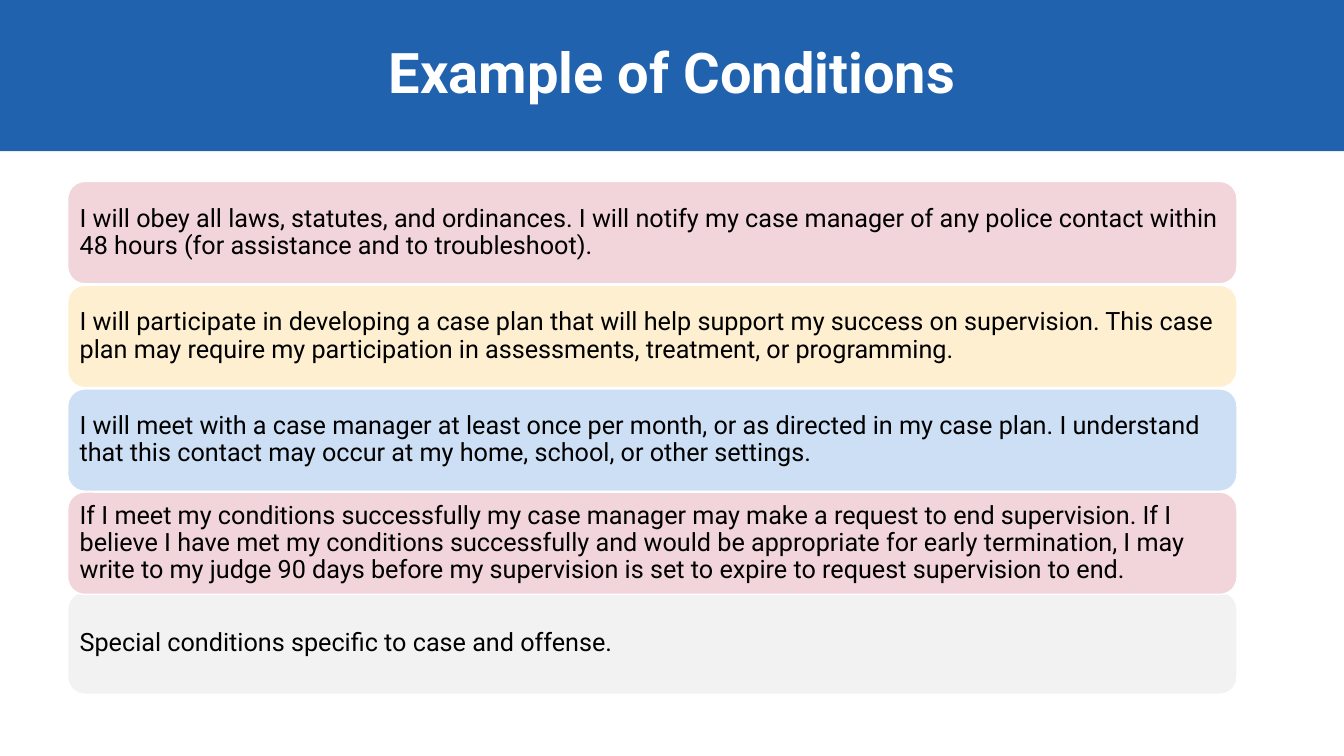
from pptx import Presentation
from pptx.dml.color import RGBColor
from pptx.enum import shapes, text
from pptx.util import Pt

BLUE = RGBColor(0x21, 0x62, 0xAE)
WHITE = RGBColor(0xFF, 0xFF, 0xFF)
BLACK = RGBColor(0, 0, 0)
ROSE = RGBColor(0xF1, 0xD5, 0xDA)
CREAM = RGBColor(0xFE, 0xEF, 0xD1)
SKY = RGBColor(0xCC, 0xDF, 0xF5)
GREY = RGBColor(0xF2, 0xF2, 0xF2)

WIDE, HIGH = Pt(960), Pt(540)
HEAD = {"name": "Roboto", "size": Pt(40), "bold": True}
BODY = {"name": "Roboto", "size": Pt(18), "bold": False}
INSET = {"margin_left": Pt(5), "margin_right": Pt(5),
         "margin_top": Pt(5), "margin_bottom": Pt(5)}
FRAME = {"word_wrap": True, "auto_size": text.MSO_AUTO_SIZE.NONE,
         "vertical_anchor": text.MSO_ANCHOR.MIDDLE}

CARDS = [
    (129.6, ROSE, "I will obey all laws, statutes, and ordinances. I will notify my case "
     "manager of any police contact within 48 hours (for assistance and to troubleshoot)."),
    (203.7, CREAM, "I will participate in developing a case plan that will help support my "
     "success on supervision. This case plan may require my participation in assessments, "
     "treatment, or programming."),
    (277.8, SKY, "I will meet with a case manager at least once per month, or as directed in "
     "my case plan. I understand that this contact may occur at my home, school, or other "
     "settings."),
    (422.8, GREY, "Special conditions specific to case and offense."),
    (351.5, ROSE, "If I meet my conditions successfully my case manager may make a request to "
     "end supervision. If I believe I have met my conditions successfully and would be "
     "appropriate for early termination, I may write to my judge 90 days before my "
     "supervision is set to expire to request supervision to end."),
]


def style(item, form):
    for key, value in form.items():
        setattr(item, key, value)


def paint(shape, color):
    shape.fill.solid()
    shape.fill.fore_color.rgb = color


def write(shape, words, font, color, align):
    frame = shape.text_frame
    frame.text = words
    style(frame, FRAME)
    para = frame.paragraphs[0]
    style(para, {"alignment": align, "line_spacing": 0.9})
    style(para.font, font)
    para.font.color.rgb = color


def banner(slide, words):
    title = slide.shapes.title
    style(title, {"left": 0, "top": 0, "width": WIDE, "height": Pt(108)})
    paint(title, BLUE)
    write(title, words, HEAD, WHITE, text.PP_ALIGN.CENTER)


def card(slide, top, color, words):
    box = slide.shapes.add_shape(shapes.MSO_SHAPE.ROUNDED_RECTANGLE,
                                 Pt(48.4), Pt(top), Pt(835.2), Pt(73.1))
    box.shadow.inherit = False
    paint(box, color)
    box.line.color.rgb = WHITE
    box.line.width = Pt(1)
    style(box.text_frame, INSET)
    write(box, words, BODY, BLACK, text.PP_ALIGN.LEFT)


def main():
    deck = Presentation()
    style(deck, {"slide_width": WIDE, "slide_height": HIGH})
    slide = deck.slides.add_slide(deck.slide_layouts[5])
    banner(slide, "Example of Conditions")
    for top, color, words in CARDS:
        card(slide, top, color, words)
    deck.save("out.pptx")


if __name__ == "__main__":
    main()
